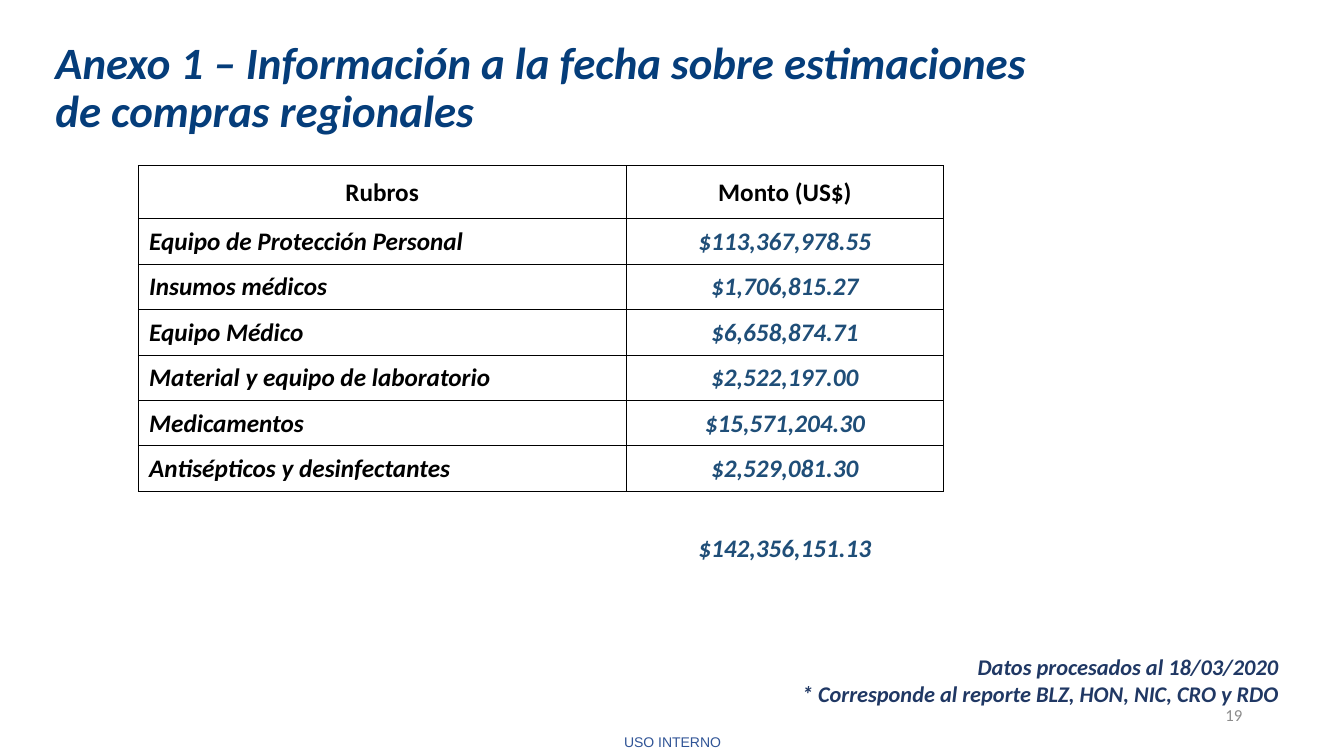
import dataclasses

import lxml.etree
import pptx
import pptx.dml.color
import pptx.enum.text
import pptx.oxml.ns
import pptx.util

EMU_PER_PX = 9144
ALIGN = pptx.enum.text.PP_ALIGN
ANCHOR = pptx.enum.text.MSO_ANCHOR


@dataclasses.dataclass(frozen=True)
class Theme:
    font: str = "Calibri"
    label_font: str = "Arial"
    title_color: str = "053D7A"
    text_color: str = "000000"
    amount_color: str = "1F4E78"
    note_color: str = "203864"
    label_color: str = "305496"
    number_color: str = "8C8C8C"
    title_size: int = 32
    table_size: int = 18
    note_size: int = 16
    number_size: int = 12
    label_size: int = 10
    border_width: float = 0.5


def px(length):
    return pptx.util.Emu(length * EMU_PER_PX)


def write_text(frame, text, *, size, color, font, bold=False, italic=False,
               align=ALIGN.LEFT, line_spacing=None):
    for index, line in enumerate(text.split("\n")):
        paragraph = frame.add_paragraph() if index else frame.paragraphs[0]
        paragraph.alignment = align
        paragraph.line_spacing = line_spacing
        run = paragraph.add_run()
        run.text = line
        run.font.name = font
        run.font.size = pptx.util.Pt(size)
        run.font.bold = bold
        run.font.italic = italic
        run.font.color.rgb = pptx.dml.color.RGBColor.from_string(color)


class SlideBuilder:
    def __init__(self, slide, theme):
        self.slide = slide
        self.theme = theme

    def title(self, text, left, top, width, height):
        shape = self.slide.shapes.title
        shape.left, shape.top = px(left), px(top)
        shape.width, shape.height = px(width), px(height)
        frame = shape.text_frame
        frame.auto_size = pptx.enum.text.MSO_AUTO_SIZE.NONE
        frame.vertical_anchor = ANCHOR.TOP
        write_text(frame, text, size=self.theme.title_size, color=self.theme.title_color,
                   font=self.theme.font, bold=True, italic=True, line_spacing=0.9)

    def text_box(self, text, left, top, width, height, anchor=ANCHOR.TOP, **text_format):
        shape = self.slide.shapes.add_textbox(px(left), px(top), px(width), px(height))
        shape.text_frame.word_wrap = True
        shape.text_frame.vertical_anchor = anchor
        write_text(shape.text_frame, text, **text_format)

    def borders(self, cell, sides):
        properties = cell._tc.get_or_add_tcPr()
        for position, side in enumerate(("L", "R", "T", "B")):
            line = lxml.etree.Element(pptx.oxml.ns.qn(f"a:ln{side}"))
            if side in sides:
                line.set("w", str(pptx.util.Pt(self.theme.border_width)))
                fill = lxml.etree.SubElement(line, pptx.oxml.ns.qn("a:solidFill"))
                color = lxml.etree.SubElement(fill, pptx.oxml.ns.qn("a:srgbClr"))
                color.set("val", self.theme.text_color)
            else:
                lxml.etree.SubElement(line, pptx.oxml.ns.qn("a:noFill"))
            properties.insert(position, line)

    def cell(self, cell, text, sides, indent=0, **text_format):
        cell.fill.background()
        cell.vertical_anchor = ANCHOR.MIDDLE
        cell.margin_left = px(1 + indent)
        cell.margin_right = cell.margin_top = px(1)
        cell.margin_bottom = 0
        self.borders(cell, sides)
        if text:
            write_text(cell.text_frame, text, size=self.theme.table_size,
                       font=self.theme.font, bold=True, **text_format)

    def table(self, rows, left, top, column_widths, row_heights, framed_rows):
        frame = self.slide.shapes.add_table(
            len(rows), len(column_widths), px(left), px(top),
            px(sum(column_widths)), px(sum(row_heights)))
        table = frame.table
        table.first_row = table.horz_banding = False
        for column, width in zip(table.columns, column_widths):
            column.width = px(width)
        for row, height in zip(table.rows, row_heights):
            row.height = px(height)
        for row_index, row in enumerate(rows):
            sides = "LRTB" if row_index < framed_rows else ""
            if row_index == framed_rows:
                sides = "T"
            header = row_index == 0
            for column_index, text in enumerate(row):
                item = column_index == 0 and not header
                amount = column_index == 1 and not header
                self.cell(
                    table.cell(row_index, column_index), text, sides,
                    indent=10 if item else 0,
                    color=self.theme.amount_color if amount else self.theme.text_color,
                    italic=not header,
                    align=ALIGN.LEFT if item else ALIGN.CENTER)


def main():
    presentation = pptx.Presentation()
    presentation.slide_width, presentation.slide_height = px(1333), px(750)
    theme = Theme()
    builder = SlideBuilder(presentation.slides.add_slide(presentation.slide_layouts[5]), theme)

    builder.title("Anexo 1 – Información a la fecha sobre estimaciones de compras regionales",
                  45, 35, 995, 97)
    builder.text_box("USO INTERNO", 14, 723, 1306, 27, size=theme.label_size,
                     color=theme.label_color, font=theme.label_font, align=ALIGN.CENTER)
    builder.text_box(
        "Datos procesados al 18/03/2020\n* Corresponde al reporte BLZ, HON, NIC, CRO y RDO",
        751, 643, 527, 64, size=theme.note_size, color=theme.note_color,
        font=theme.font, bold=True, italic=True, align=ALIGN.RIGHT)

    purchases = [
        ("Rubros", "Monto (US$)"),
        ("Equipo de Protección Personal", "$113,367,978.55"),
        ("Insumos médicos", "$1,706,815.27"),
        ("Equipo Médico", "$6,658,874.71"),
        ("Material y equipo de laboratorio", "$2,522,197.00"),
        ("Medicamentos", "$15,571,204.30"),
        ("Antisépticos y desinfectantes", "$2,529,081.30"),
    ]
    total = [("", ""), ("", "$142,356,151.13")]
    builder.table(purchases + total, 137, 164, (484, 315),
                  [53] + [45] * 6 + [32, 51], framed_rows=len(purchases))

    builder.text_box("19", 942, 689, 300, 40, anchor=ANCHOR.MIDDLE, size=theme.number_size,
                     color=theme.number_color, font=theme.font, align=ALIGN.RIGHT)
    presentation.save("out.pptx")


if __name__ == "__main__":
    main()
